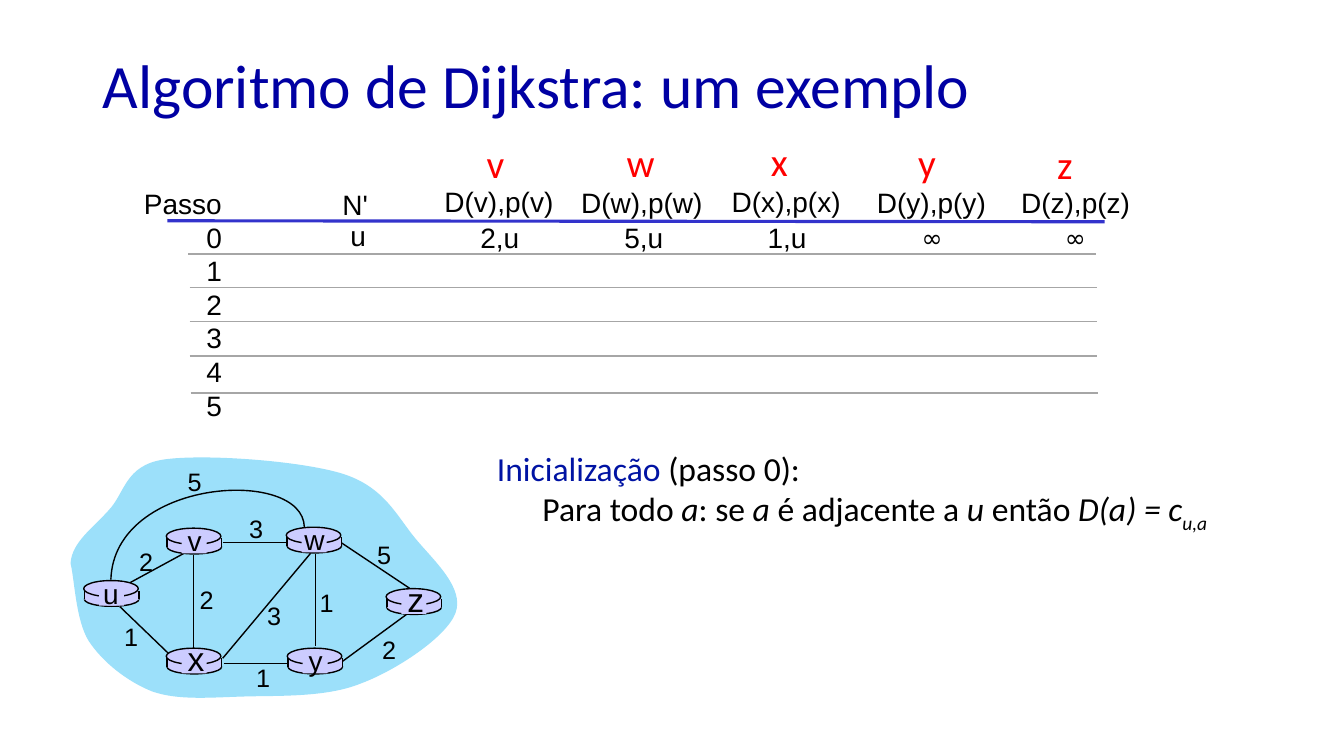
from pptx import Presentation
from pptx import util as u
from pptx.dml.color import RGBColor
from pptx.enum import shapes, text
from pptx.oxml.xmlchemy import OxmlElement

TITLE_BLUE = RGBColor(0x00, 0x00, 0xA3)
PHASE_BLUE = RGBColor(0x00, 0x13, 0xA3)
RULE_BLUE = RGBColor(0x33, 0x33, 0xCC)
RULE_GREY = RGBColor(0xA6, 0xA6, 0xA6)
CLOUD = RGBColor(0x9C, 0xE0, 0xFA)
ROUTER = RGBColor(0xCC, 0xCC, 0xFF)
RED = RGBColor(0xFF, 0x00, 0x00)
BLACK = RGBColor(0x00, 0x00, 0x00)
LEFT, CENTER, RIGHT = text.PP_ALIGN.LEFT, text.PP_ALIGN.CENTER, text.PP_ALIGN.RIGHT

deck = Presentation()
deck.slide_width, deck.slide_height = u.Pt(960), u.Pt(540)
page = deck.slides.add_slide(deck.slide_layouts[5])


def write(words, center, top, width, size=20, align=CENTER, font="Arial", color=BLACK):
    """Add an unwrapped text box centred on a given x, one paragraph a line."""
    lines = words.split("\n")
    box = page.shapes.add_textbox(u.Pt(center - width / 2), u.Pt(top), u.Pt(width),
                                  u.Pt(7.2 + 1.2 * size * len(lines)))
    frame = box.text_frame
    frame.word_wrap = False
    frame.auto_size = text.MSO_AUTO_SIZE.SHAPE_TO_FIT_TEXT
    frame.text = words
    for para in frame.paragraphs:
        para.alignment = align
        for span in para.runs:
            span.font.size = u.Pt(size)
            span.font.name = font
            span.font.color.rgb = color


def draw_line(x1, y1, x2, y2, color=BLACK, weight=1):
    line = page.shapes.add_connector(shapes.MSO_CONNECTOR.STRAIGHT,
                                     u.Pt(x1), u.Pt(y1), u.Pt(x2), u.Pt(y2))
    line.line.color.rgb = color
    line.line.width = u.Pt(weight)
    line._element.spPr.append(OxmlElement("a:effectLst"))


# Title
title = page.shapes.title
title.left, title.top, title.width, title.height = u.Pt(66.2), u.Pt(28.1), u.Pt(880.6), u.Pt(70.6)
title.text_frame.text = "Algoritmo de Dijkstra: um exemplo"
title.text_frame.vertical_anchor = text.MSO_ANCHOR.MIDDLE
para = title.text_frame.paragraphs[0]
para.alignment = LEFT
para.line_spacing = 0.9
span = para.runs[0]
span.font.size = u.Pt(44)
span.font.name = "Calibri"
span.font.color.rgb = TITLE_BLUE

# Step table
write("Passo\n0\n1\n2\n3\n4\n5", 130.3, 129.6, 70.6, align=RIGHT)
write("N'", 253.4, 130.3, 33.1, align=RIGHT)
write("u", 255.6, 152.6, 25.9, align=RIGHT)

# node, letter centre, top and width, heading centre, top and width, value and its centre
columns = [
    ("v", 354.2, 95.8, 27.4, 356, 128.2, 92.9, "2,u", 356.8),
    ("w", 457.9, 95, 34.6, 457.9, 128.9, 102.2, "5,u", 459.7),
    ("x", 556.9, 94.3, 26.6, 561.2, 128.2, 92.9, "1,u", 562),
    ("y", 662.4, 95, 27.4, 664.9, 128.9, 92.9, "∞", 665.6),
    ("z", 761, 96.5, 25.9, 767.9, 128.9, 92.9, "∞", 767.9),
]
for (node, letter_x, letter_top, letter_width,
     head_x, head_top, head_width, value, value_x) in columns:
    write(node, letter_x, letter_top, letter_width, 28, LEFT, "Calibri", RED)
    write(f"D({node}),p({node})", head_x, head_top, head_width, align=RIGHT)
    if value == "∞":
        write(value, value_x, 155.5, 29.5, 18, RIGHT, "Comic Neue")
    else:
        write(value, value_x, 153.7, 42.5, align=RIGHT)

draw_line(119.5, 157.7, 789.1, 158.4, RULE_BLUE, 2.25)
for left, y in ((134.6, 181.4), (135.4, 205.2), (135.4, 229.7), (135.4, 254.2), (136.1, 280.8)):
    draw_line(left, y, left + 648, y, RULE_GREY)

# Cloud and the curved u-w link: a start, then three control points a curve
cloud = [
    (50.4, 402.5), (51.1, 387.4), (67, 376.6), (77.8, 364.3),
    (89.3, 352.1), (89.3, 332.6), (116.6, 328.3),
    (144.7, 324), (214.6, 329), (244.8, 338.4),
    (274.3, 347.8), (283, 367.9), (296.6, 384.5),
    (310.3, 401), (331.9, 419.8), (325.4, 437.8),
    (319, 455), (283, 478.8), (257.8, 488.2),
    (233.3, 498.2), (199.4, 496.8), (175, 497.5),
    (149.8, 498.2), (127.4, 500.4), (108.7, 493.9),
    (90.7, 486.7), (73.4, 473), (63.4, 457.9),
    (54, 442.8), (53.3, 414), (50.4, 402.5),
]
link_u_w = [(217.4, 376.6), (216.7, 333.4), (81.4, 341.3), (79.2, 414)]
for controls, closed in ((cloud, True), (link_u_w, False)):
    points = [(u.Pt(x), u.Pt(y)) for x, y in controls]
    builder = page.shapes.build_freeform(*points[0])
    builder.add_line_segments(points[1:], close=closed)
    curve = builder.convert_to_shape()
    segments = curve._element.xpath(".//a:lnTo")
    for first in range(0, len(controls) - 1, 3):
        bend = OxmlElement("a:cubicBezTo")
        segments[first].addprevious(bend)
        for segment in segments[first:first + 3]:
            bend.append(segment[0])
            segment.getparent().remove(segment)
    curve.shadow.inherit = False
    if closed:
        curve.fill.solid()
        curve.fill.fore_color.rgb = CLOUD
        curve.line.fill.background()
    else:
        curve.fill.background()
        curve.line.color.rgb = BLACK
        curve.line.width = u.Pt(1)

# Straight links
links = [
    (92.9, 416.2, 135.4, 393.1), (225.4, 396, 225.4, 461.5), (138.2, 396.7, 138.2, 464.4),
    (159.1, 470.2, 221.8, 395.3), (244.8, 472.3, 290.9, 438.5), (159.8, 473.8, 205.9, 473.8),
    (85.7, 433.4, 120.2, 466.6), (159.1, 387.4, 205.2, 387.4), (243.4, 387.4, 293, 420.5),
]
for link in links:
    draw_line(*link)

# Routers: name, left, top, label centre, label width, label size
routers = [
    ("u", 59.8, 414.7, 79.2, 25.9, 20), ("x", 118.8, 463, 140, 26.6, 24),
    ("v", 118.8, 377.3, 139, 24.5, 20), ("w", 204.5, 376.6, 224.6, 28.8, 20),
    ("y", 205.2, 463, 225.4, 24.5, 20), ("z", 275.8, 420.5, 297, 26.6, 24),
]
OVAL, RECTANGLE = shapes.MSO_SHAPE.OVAL, shapes.MSO_SHAPE.RECTANGLE
# shape, x offset, y offset, width, height, outlined
router_parts = [
    (OVAL, 0.5, 8.3, 39, 10.1, True),
    (RECTANGLE, 0.5, 7.2, 39, 6.4, False),
    (OVAL, 0, 0, 39, 11.5, True),
    (RECTANGLE, 11, 1.4, 17.8, 16.6, False),
]
for name, left, top, label_x, label_width, size in routers:
    for kind, dx, dy, width, height, outlined in router_parts:
        part = page.shapes.add_shape(kind, u.Pt(left + dx), u.Pt(top + dy),
                                     u.Pt(width), u.Pt(height))
        part.shadow.inherit = False
        part.fill.solid()
        part.fill.fore_color.rgb = ROUTER
        if outlined:
            part.line.color.rgb = BLACK
            part.line.width = u.Pt(1)
        else:
            part.line.fill.background()
    for side in (left + 0.5, left + 39.5):
        draw_line(side, top + 7.2, side, top + 13.4)
    write(name, label_x, top - (10.8 if size == 24 else 6.8), label_width, size)

# Link costs: value, centre, top
costs = [
    ("2", 104.4, 386.6), ("2", 147.6, 414), ("1", 93.6, 440.6), ("3", 195.8, 425.5),
    ("1", 187.9, 469.4), ("1", 233.3, 416.2), ("2", 277.9, 449.3), ("5", 274.3, 381.6),
    ("3", 182.9, 362.9), ("5", 139, 329.8),
]
for cost, center, top in costs:
    write(cost, center, top, 24.5, 18)

# Initialisation step
box = page.shapes.add_textbox(u.Pt(347.8), u.Pt(319.7), u.Pt(536.4), u.Pt(59.8))
frame = box.text_frame
frame.word_wrap = True
frame.auto_size = text.MSO_AUTO_SIZE.SHAPE_TO_FIT_TEXT
statements = [
    [("Inicialização", False), (" (passo 0):", False)],
    [("Para todo ", False), ("a", True), (": se ", False), ("a ", True),
     ("é adjacente a ", False), ("u", True), (" então ", False),
     ("D(a) = c", True), ("u,a", True)],
]
frame.add_paragraph()
for para, statement in zip(frame.paragraphs, statements):
    para.line_spacing = 0.9
    for words, italic in statement:
        span = para.add_run()
        span.text = words
        span.font.size = u.Pt(24)
        span.font.name = "Calibri"
        span.font.italic = italic
        span.font.color.rgb = BLACK
heading, rule = frame.paragraphs
heading.runs[0].font.color.rgb = PHASE_BLUE
rule._p.get_or_add_pPr().set("marL", str(u.Pt(32.5)))
rule.runs[-1].font._element.set("baseline", "-25000")

deck.save("out.pptx")
